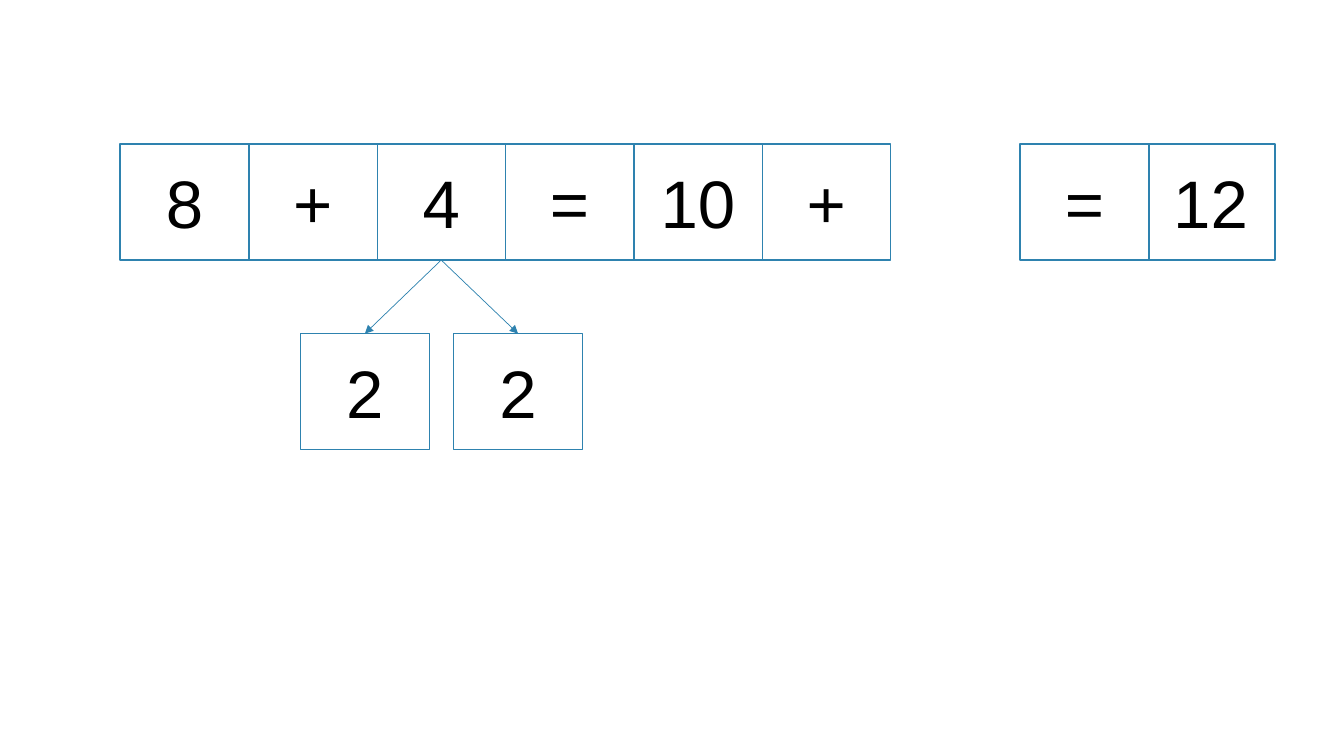
from typing import NamedTuple

from lxml import etree
from pptx import Presentation
from pptx.dml.color import RGBColor
from pptx.enum.shapes import MSO_CONNECTOR, MSO_SHAPE
from pptx.enum.text import MSO_ANCHOR, PP_ALIGN
from pptx.oxml.ns import qn
from pptx.shapes.autoshape import Shape
from pptx.shapes.connector import Connector
from pptx.slide import Slide
from pptx.util import Pt

RECT = MSO_SHAPE.RECTANGLE
STRAIGHT = MSO_CONNECTOR.STRAIGHT
MIDDLE = MSO_ANCHOR.MIDDLE
CENTER = PP_ALIGN.CENTER
TOP, BOTTOM = 0, 2

COLORS = {"fill": "FFFFFF", "line": "2E82AF", "text": "000000"}
FONT = "Arial"
WIDTH, HEIGHT = 92.16, 82.8
SUM_TOP, PART_TOP = 102.96, 238.32


class Row(NamedTuple):
    left: float
    top: float
    pitch: float
    texts: tuple[str, ...]


RESULT = Row(728.64, SUM_TOP, 90, ("=", "12"))
SUM = Row(85.68, SUM_TOP, 91.7, ("8", "+", "4", "=", "10", "+"))
PARTS = Row(214.56, PART_TOP, 109.44, ("2", "2"))


def color(name: str) -> RGBColor:
    return RGBColor.from_string(COLORS[name])


def add_box(slide: Slide, left: float, top: float, text: str) -> Shape:
    box = slide.shapes.add_shape(RECT, Pt(left), Pt(top), Pt(WIDTH), Pt(HEIGHT))
    box.shadow.inherit = False
    box.fill.solid()
    box.fill.fore_color.rgb = color("fill")
    box.line.color.rgb = color("line")
    box.line.width = Pt(1)
    frame = box.text_frame
    frame.text = text
    frame.word_wrap = True
    frame.vertical_anchor = MIDDLE
    line = frame.paragraphs[0]
    line.alignment = CENTER
    font = line.runs[0].font
    font.name = FONT
    font.size = Pt(48)
    font.color.rgb = color("text")
    return box


def add_row(slide: Slide, row: Row) -> list[Shape]:
    cells = list(enumerate(row.texts))
    boxes = [
        add_box(slide, row.left + i * row.pitch, row.top, text)
        for i, text in reversed(cells)
    ]
    return boxes[::-1]


def add_arrow(slide: Slide, start: Shape, end: Shape) -> Connector:
    arrow = slide.shapes.add_connector(STRAIGHT, Pt(0), Pt(0), Pt(0), Pt(0))
    arrow.begin_connect(start, BOTTOM)
    arrow.end_connect(end, TOP)
    arrow.line.color.rgb = color("line")
    arrow.line.width = Pt(0.5)
    tail = etree.SubElement(arrow.line._get_or_add_ln(), qn("a:tailEnd"))
    tail.set("type", "triangle")
    etree.SubElement(arrow._element.spPr, qn("a:effectLst"))
    return arrow


def main() -> None:
    deck = Presentation()
    deck.slide_width, deck.slide_height = Pt(960), Pt(540)
    slide = deck.slides.add_slide(deck.slide_layouts[6])
    add_row(slide, RESULT)
    terms = add_row(slide, SUM)
    addend = terms[SUM.texts.index("4")]
    for part in add_row(slide, PARTS):
        add_arrow(slide, addend, part)
    deck.save("out.pptx")


if __name__ == "__main__":
    main()
